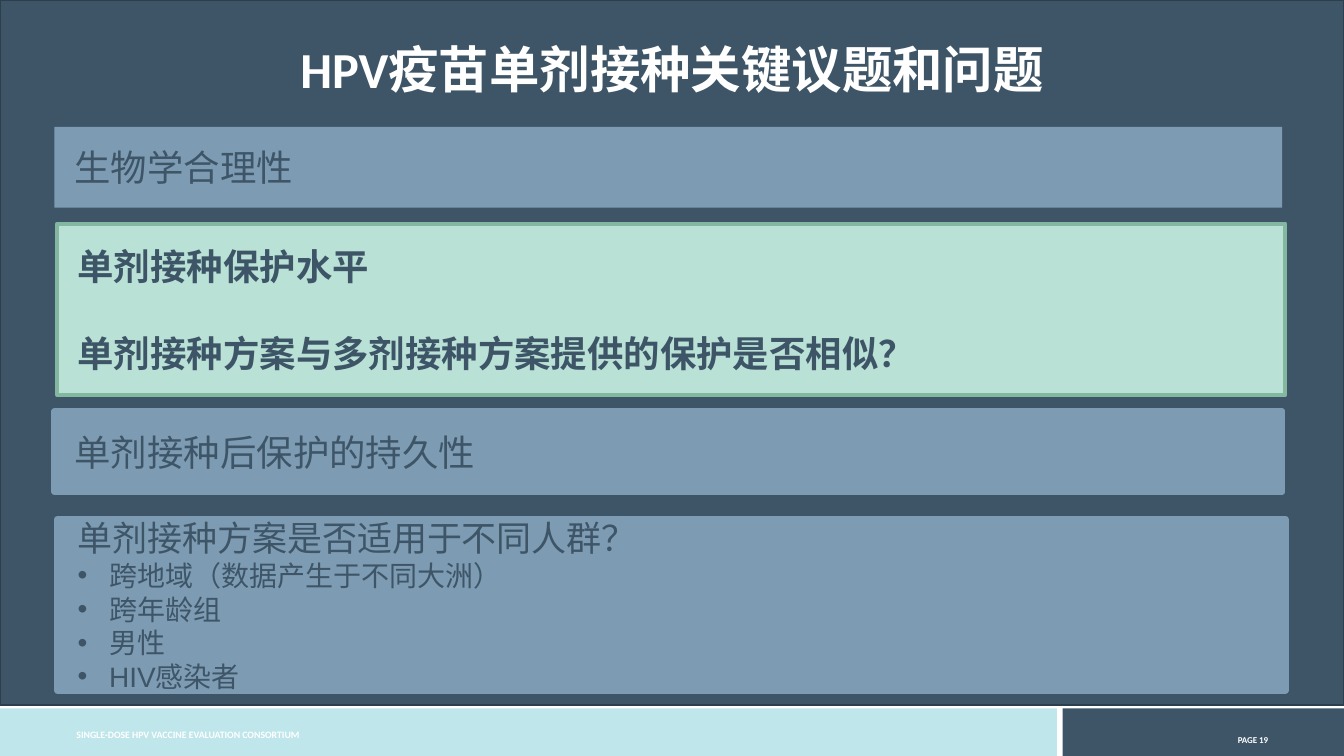
import pptx
import pptx.util
import pptx.dml.color
import pptx.enum.shapes
import pptx.enum.text
import pptx.oxml.ns
from lxml import etree

Pt = pptx.util.Pt
RGB = pptx.dml.color.RGBColor
ALIGN = pptx.enum.text.PP_ALIGN
ANCHOR = pptx.enum.text.MSO_ANCHOR
qn = pptx.oxml.ns.qn

NAVY = RGB(0x3D, 0x55, 0x67)
NAVY_EDGE = RGB(0x2D, 0x3F, 0x4C)
AQUA = RGB(0xBF, 0xE6, 0xEA)
MINT = RGB(0xB9, 0xE1, 0xD6)
GREEN = RGB(0x84, 0xB7, 0xA0)
STEEL = RGB(0x7D, 0x9B, 0xB2)
WHITE = RGB(0xFF, 0xFF, 0xFF)
CJK_FONT = "Noto Sans CJK SC"

presentation = pptx.Presentation()
presentation.slide_width, presentation.slide_height = Pt(960), Pt(540)
slide = presentation.slides.add_slide(presentation.slide_layouts[6])


def add_panel(left, top, width, height, fill, edge=None, edge_width=0):
    panel = slide.shapes.add_shape(
        pptx.enum.shapes.MSO_SHAPE.RECTANGLE, Pt(left), Pt(top), Pt(width), Pt(height))
    panel.shadow.inherit = False
    panel.fill.solid()
    panel.fill.fore_color.rgb = fill
    if edge is None:
        panel.line.fill.background()
    else:
        panel.line.color.rgb = edge
        panel.line.width = Pt(edge_width)
        etree.SubElement(panel.line._ln, qn("a:round"))
    return panel


def style_runs(paragraph, size, color, bold, font=CJK_FONT):
    """Format every run, with the CJK face for East Asian glyphs."""
    for run in paragraph.runs:
        run.font.size = Pt(size)
        run.font.bold = bold
        run.font.color.rgb = color
        run.font.name = font
        east_asian = etree.SubElement(run._r.get_or_add_rPr(), qn("a:ea"))
        east_asian.set("typeface", CJK_FONT)


# Background and footer bands
add_panel(0, 506, 755, 34, AQUA)
add_panel(759, 506, 201, 34, NAVY)
add_panel(0, 0, 960, 503.5, NAVY, NAVY_EDGE, 1)

# Title and footer texts: box, wording, size, alignment, anchor, baseline
captions = [
    ((6.5, 28.8, 947, 68.4), "HPV疫苗单剂接种关键议题和问题", 36, ALIGN.CENTER, ANCHOR.TOP, 0),
    ((47.5, 517, 313, 16), "SINGLE-DOSE HPV VACCINE EVALUATION CONSORTIUM", 7, ALIGN.LEFT,
     ANCHOR.MIDDLE, 0),
    ((797, 520, 116, 16), "PAGE 19", 11, ALIGN.RIGHT, ANCHOR.TOP, 30000),
]
for box, wording, size, alignment, anchor, baseline in captions:
    caption = slide.shapes.add_textbox(*(Pt(length) for length in box)).text_frame
    caption.word_wrap = True
    caption.vertical_anchor = anchor
    caption.text = wording
    line = caption.paragraphs[0]
    line.alignment = alignment
    line.line_spacing = 0.9 if size == 36 else 1.0
    style_runs(line, size, WHITE, True, "Calibri")
    if baseline:
        line.runs[0].font._element.set("baseline", str(baseline))

# Issue panels: left, top, height, fill, edge, edge width, heading size, bold, gap, lines
issues = [
    (38.9, 90.7, 57.6, STEEL, None, 0, 26, False, 0, ["生物学合理性"]),
    (41, 159.8, 122.4, MINT, GREEN, 3, 26, True, 30.5,
     ["单剂接种保护水平", "单剂接种方案与多剂接种方案提供的保护是否相似？"]),
    (38.9, 293.8, 57.6, STEEL, STEEL, 4.5, 26, False, 0, ["单剂接种后保护的持久性"]),
    (41, 370.8, 122.4, STEEL, STEEL, 5, 25, False, 0, ["单剂接种方案是否适用于不同人群？"]),
]
for left, top, height, fill, edge, edge_width, size, bold, gap, lines in issues:
    issue = add_panel(left, top, 877, height, fill, edge, edge_width).text_frame
    issue.word_wrap = True
    issue.vertical_anchor = ANCHOR.MIDDLE
    issue.margin_left = Pt(14.4)
    issue.text = "\n".join(lines)
    for number, paragraph in enumerate(issue.paragraphs):
        paragraph.alignment = ALIGN.LEFT
        if number:
            paragraph.space_before = Pt(gap)
        style_runs(paragraph, size, NAVY, bold)

# Population bullets in the last panel
populations = ["跨地域（数据产生于不同大洲）", "跨年龄组", "男性", "HIV感染者"]
for population in populations:
    bullet = issue.add_paragraph()
    bullet.alignment = ALIGN.LEFT
    properties = bullet._p.get_or_add_pPr()
    properties.set("marL", str(Pt(22.5)))
    properties.set("indent", str(Pt(-22.5)))
    etree.SubElement(properties, qn("a:buFont")).set("typeface", "Arial")
    etree.SubElement(properties, qn("a:buChar")).set("char", "•")
    bullet.text = population
    style_runs(bullet, 20, NAVY, False, "Arial" if population.startswith("HIV") else CJK_FONT)

presentation.save("out.pptx")
